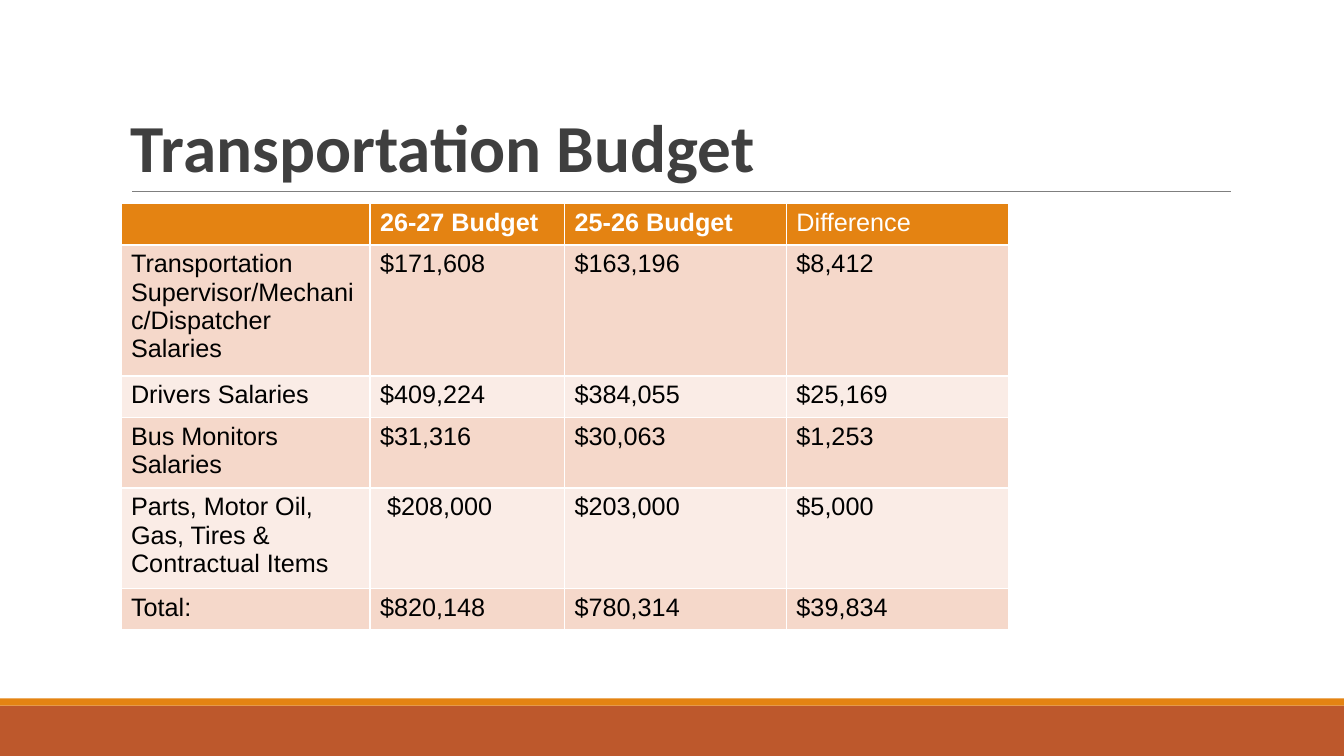
from lxml import etree
from pptx import Presentation
from pptx.dml.color import RGBColor
from pptx.enum.shapes import MSO_CONNECTOR, MSO_SHAPE
from pptx.enum.text import MSO_ANCHOR
from pptx.oxml.ns import qn
from pptx.util import Inches, Pt

TITLE = "Transportation Budget"
HEADER = ("", "26-27 Budget", "25-26 Budget", "Difference")
BUDGET = [
    ("Transportation Supervisor/Mechanic/Dispatcher Salaries", "$171,608", "$163,196", "$8,412"),
    ("Drivers Salaries", "$409,224", "$384,055", "$25,169"),
    ("Bus Monitors Salaries", "$31,316", "$30,063", "$1,253"),
    ("Parts, Motor Oil, Gas, Tires & Contractual Items", " $208,000", "$203,000", "$5,000"),
    ("Total:", "$820,148", "$780,314", "$39,834"),
]
COLUMN_WIDTHS = (2.47, 1.93, 2.2, 2.2)
ROW_LINES = (1, 4, 1, 2, 3, 1)
LINE_HEIGHT, CELL_PADDING, MIN_ROW = 0.28, 0.1, 0.41

WIDTH, HEIGHT = 13.33, 7.5
LEFT = 1.2
BANDS_TOP, BAND_SPLIT = 6.93, 7

WHITE = RGBColor(0xFF, 0xFF, 0xFF)
BLACK = RGBColor(0x00, 0x00, 0x00)
ORANGE = RGBColor(0xE4, 0x83, 0x12)
RUST = RGBColor(0xBD, 0x58, 0x2C)
CHARCOAL = RGBColor(0x3F, 0x3F, 0x3F)
GRAY = RGBColor(0x7F, 0x7F, 0x7F)
ROW_FILLS = (RGBColor(0xFA, 0xEC, 0xE6), RGBColor(0xF5, 0xD8, 0xCA))


def style(paragraph, name, size, color, bold):
    font = paragraph.font
    if paragraph.runs:
        font = paragraph.runs[0].font
    font.name, font.size, font.bold = name, Pt(size), bold
    font.color.rgb = color


def add_band(slide, top, bottom, color):
    shape = slide.shapes.add_shape(
        MSO_SHAPE.RECTANGLE, 0, Inches(top), Inches(WIDTH), Inches(bottom - top))
    shape.shadow.inherit = False
    shape.fill.solid()
    shape.fill.fore_color.rgb = color
    shape.line.fill.background()


def add_title(slide):
    rule = slide.shapes.add_connector(
        MSO_CONNECTOR.STRAIGHT, Inches(1.31), Inches(1.9), Inches(12.21), Inches(1.9))
    rule.line.color.rgb = GRAY
    rule.line.width = Pt(0.75)
    etree.SubElement(rule._element.spPr, qn("a:effectLst"))

    box = slide.shapes.add_textbox(Inches(LEFT), Inches(0.31), Inches(11), Inches(1.59))
    text_frame = box.text_frame
    text_frame.word_wrap = True
    text_frame.vertical_anchor = MSO_ANCHOR.BOTTOM
    text_frame.text = TITLE
    paragraph = text_frame.paragraphs[0]
    paragraph.line_spacing = 0.85
    style(paragraph, "Calibri", 48, CHARCOAL, True)


def add_budget_table(slide):
    rows = [HEADER, *BUDGET]
    heights = [max(MIN_ROW, lines * LINE_HEIGHT + CELL_PADDING) for lines in ROW_LINES]
    table = slide.shapes.add_table(
        len(rows), len(HEADER), Inches(LEFT), Inches(2.02),
        Inches(sum(COLUMN_WIDTHS)), Inches(sum(heights))).table
    for column, width in zip(table.columns, COLUMN_WIDTHS):
        column.width = Inches(width)
    for index, (values, height) in enumerate(zip(rows, heights)):
        table.rows[index].height = Inches(height)
        is_header = index == 0
        for column, value in enumerate(values):
            cell = table.cell(index, column)
            cell.fill.solid()
            cell.fill.fore_color.rgb = ORANGE if is_header else ROW_FILLS[index % 2]
            cell.text_frame.text = value
            style(cell.text_frame.paragraphs[0], "Arial", 18,
                  WHITE if is_header else BLACK, is_header and value != "Difference")


def main():
    presentation = Presentation()
    presentation.slide_width = Inches(WIDTH)
    presentation.slide_height = Inches(HEIGHT)
    slide = presentation.slides.add_slide(presentation.slide_layouts[6])
    add_band(slide, BAND_SPLIT, HEIGHT, RUST)
    add_band(slide, BANDS_TOP, BAND_SPLIT, ORANGE)
    add_title(slide)
    add_budget_table(slide)
    presentation.save("out.pptx")


if __name__ == "__main__":
    main()
